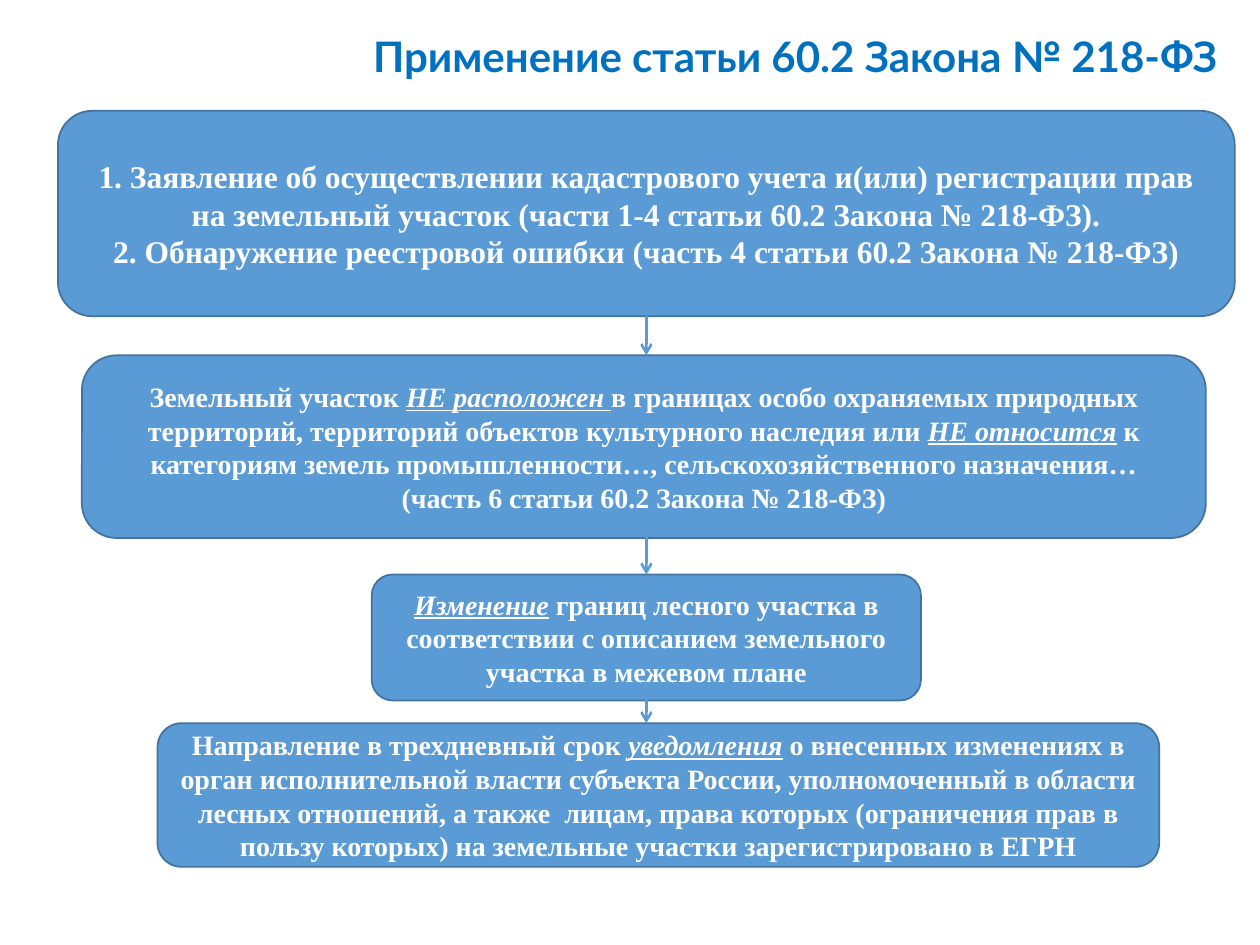
from dataclasses import dataclass

from lxml.etree import SubElement
from pptx import Presentation
from pptx.dml.color import RGBColor
from pptx.enum.shapes import MSO_CONNECTOR as Connector, MSO_SHAPE as Shape
from pptx.enum.text import MSO_ANCHOR as Anchor, PP_ALIGN as Align
from pptx.oxml.ns import qn
from pptx.util import Inches, Pt


@dataclass(frozen=True)
class Theme:
    title_color: RGBColor = RGBColor(0x00, 0x70, 0xC0)
    fill: RGBColor = RGBColor(0x5B, 0x9B, 0xD5)
    outline: RGBColor = RGBColor(0x43, 0x73, 0x9E)
    text: RGBColor = RGBColor(0xFF, 0xFF, 0xFF)
    title_font: str = "Lato"
    body_font: str = "Times New Roman"
    title_size: int = 24
    lead_size: int = 18
    body_size: int = 16


THEME = Theme()
TOP, BOTTOM = 0, 2
AXIS = 5.13

GROUNDS = [
    [("1. Заявление об осуществлении кадастрового учета и(или) регистрации прав "
      "на земельный участок (части 1-4 статьи 60.2 Закона № 218-ФЗ).", False)],
    [("2. Обнаружение реестровой ошибки (часть 4 статьи 60.2 Закона № 218-ФЗ)", False)],
]
CONDITION = [
    [("Земельный участок ", False),
     ("НЕ расположен ", True),
     ("в границах особо охраняемых природных территорий, территорий объектов "
      "культурного наследия или ", False),
     ("НЕ относится", True),
     (" к категориям земель промышленности…, сельскохозяйственного назначения…", False)],
    [("(часть 6 статьи 60.2 Закона № 218-ФЗ)", False)],
]
CHANGE = [
    [("Изменение", True),
     (" границ лесного участка в соответствии с описанием земельного участка "
      "в межевом плане", False)],
]
NOTICE = [
    [("Направление в трехдневный срок ", False),
     ("уведомления", True),
     (" о внесенных изменениях в орган исполнительной власти субъекта России, "
      "уполномоченный в области лесных отношений, а также  лицам, права которых "
      "(ограничения прав в пользу которых) на земельные участки зарегистрировано "
      "в ЕГРН", False)],
]


def add_run(paragraph, text, font_name, size, color, emphasis=False):
    run = paragraph.add_run()
    run.text = text
    font = run.font
    font.name = font_name
    font.size = Pt(size)
    font.color.rgb = color
    font.bold = True
    if emphasis:
        font.italic = True
        font.underline = True


def add_title(slide, text):
    title = slide.shapes.add_textbox(Inches(0.69), Inches(0), Inches(9.07), Inches(0.94))
    frame = title.text_frame
    frame.word_wrap = True
    frame.vertical_anchor = Anchor.MIDDLE
    heading = frame.paragraphs[0]
    heading.alignment = Align.RIGHT
    heading.line_spacing = 0.9
    add_run(heading, text, THEME.title_font, THEME.title_size, THEME.title_color)


def add_step(slide, left, top, width, height, content, size=THEME.body_size, rounding=None):
    step = slide.shapes.add_shape(
        Shape.ROUNDED_RECTANGLE, Inches(left), Inches(top), Inches(width), Inches(height))
    step.shadow.inherit = False
    step.fill.solid()
    step.fill.fore_color.rgb = THEME.fill
    step.line.color.rgb = THEME.outline
    step.line.width = Pt(1)
    if rounding is not None:
        step.adjustments[0] = rounding
    frame = step.text_frame
    frame.word_wrap = True
    frame.vertical_anchor = Anchor.MIDDLE
    for index, passages in enumerate(content):
        paragraph = frame.add_paragraph() if index else frame.paragraphs[0]
        paragraph.alignment = Align.CENTER
        for text, emphasis in passages:
            add_run(paragraph, text, THEME.body_font, size, THEME.text, emphasis)
    return step


def add_arrow(slide, start, end):
    arrow = slide.shapes.add_connector(
        Connector.STRAIGHT, Inches(AXIS), Inches(start), Inches(AXIS), Inches(end))
    arrow.line.color.rgb = THEME.fill
    arrow.line.width = Pt(1.5)
    SubElement(arrow.line._get_or_add_ln(), qn("a:tailEnd"), type="arrow")
    SubElement(arrow._element.spPr, qn("a:effectLst"))
    return arrow


def main():
    deck = Presentation()
    deck.slide_width = Inches(10)
    deck.slide_height = Inches(7.5)
    slide = deck.slides.add_slide(deck.slide_layouts[6])

    add_title(slide, "Применение статьи 60.2 Закона № 218-ФЗ")
    grounds = add_step(slide, 0.46, 0.88, 9.34, 1.63, GROUNDS, THEME.lead_size)
    add_step(slide, 0.65, 2.82, 8.92, 1.45, CONDITION, rounding=0.19)
    change = add_step(slide, 2.95, 4.56, 4.36, 1, CHANGE)
    add_step(slide, 1.25, 5.74, 7.95, 1.14, NOTICE)

    add_arrow(slide, 2.51, 2.82).begin_connect(grounds, BOTTOM)
    add_arrow(slide, 4.24, 4.56).end_connect(change, TOP)
    add_arrow(slide, 5.46, 5.74)

    deck.save("out.pptx")


if __name__ == "__main__":
    main()
